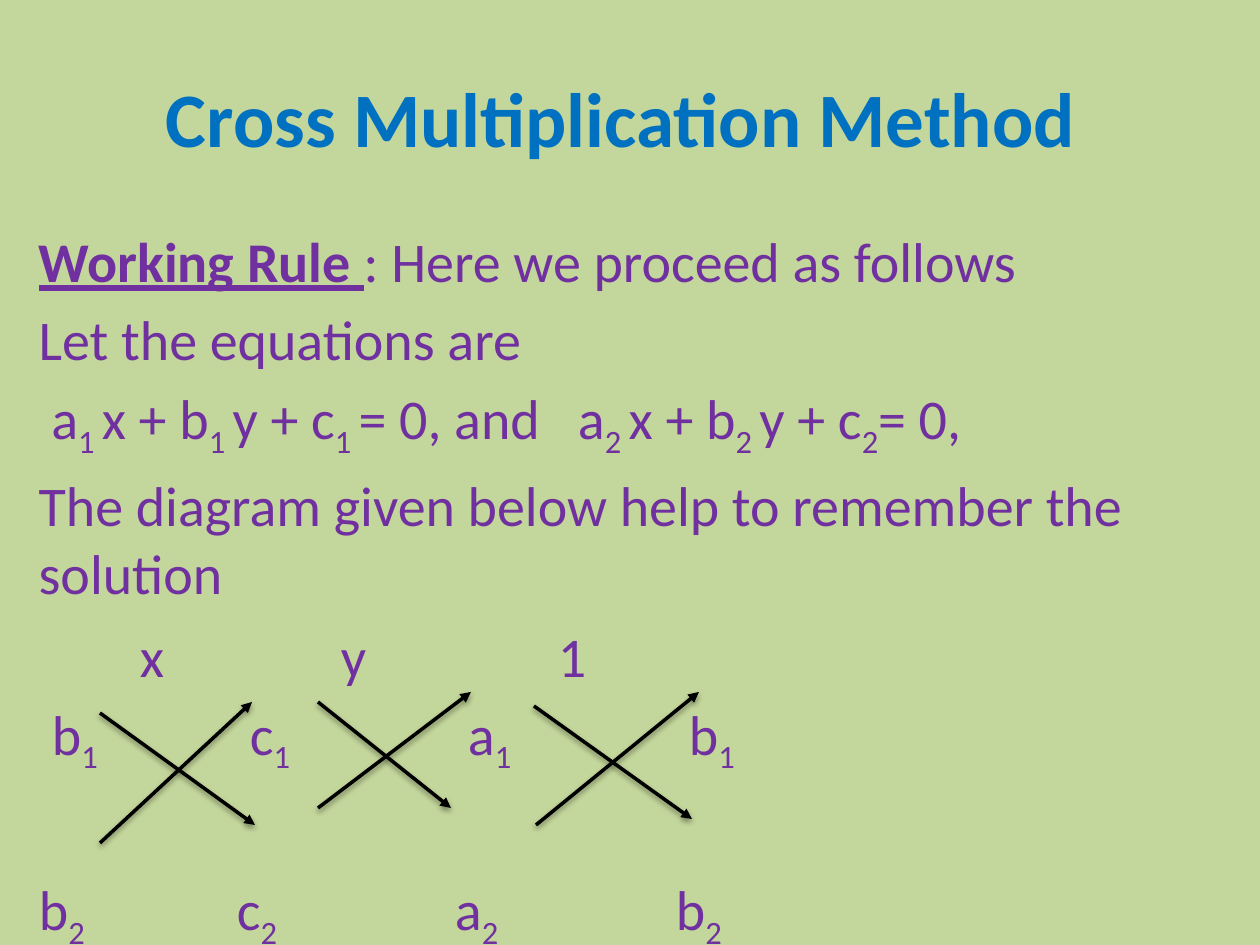
from pptx import Presentation
from pptx import util as u
from pptx.dml.color import RGBColor
from pptx.enum import shapes, text
from pptx.oxml import ns, xmlchemy

PX = 914400 / 126
GREEN = RGBColor(0xC3, 0xD6, 0x9B)
BLUE = RGBColor(0x00, 0x70, 0xC0)
PURPLE = RGBColor(0x70, 0x30, 0xA0)
BLACK = RGBColor(0, 0, 0)


def emu(px):
    """Turn pixels into EMU."""
    return u.Emu(round(px * PX))


def place(shape, box):
    """Move a shape into a box."""
    shape.left, shape.top, shape.width, shape.height = map(emu, box)


def style(font, size, color):
    """Set face, size and colour."""
    font.name = "Calibri"
    font.size = u.Pt(size)
    font.color.rgb = color


def write(para, line):
    """Add purple runs, with parts between tildes as subscripts."""
    style(para.font, 32, PURPLE)
    for i, part in enumerate(line.split("~")):
        if part:
            run = para.add_run()
            run.text = part
            if i % 2:
                run._r.get_or_add_rPr().set("baseline", "-25000")


def plain(para):
    """Drop the bullet and its indent."""
    props = para._p.get_or_add_pPr()
    props.set("marL", "0")
    props.set("indent", "0")
    props.find(ns.qn("a:defRPr")).addprevious(xmlchemy.OxmlElement("a:buNone"))


def add_title(slide, box):
    """Fill the title placeholder."""
    title = slide.shapes.title
    place(title, box)
    title.text = "Cross Multiplication Method "
    font = title.text_frame.paragraphs[0].font
    style(font, 44, BLUE)
    font.bold = True


def add_body(slide, box):
    """Fill the body placeholder with the working rule."""
    body = slide.placeholders[1]
    place(body, box)
    frame = body.text_frame
    frame.auto_size = text.MSO_AUTO_SIZE.NONE
    lines = (
        "Working Rule ~~: Here we proceed as follows",
        "Let the equations are",
        " a~1 ~x + b~1 ~y + c~1 ~= 0, and   a~2 ~x + b~2 ~y + c~2~= 0,",
        "The diagram given below help to remember the solution",
    )
    for i, line in enumerate(lines):
        para = frame.add_paragraph() if i else frame.paragraphs[0]
        write(para, line)
        plain(para)
    lead = frame.paragraphs[0].runs[0].font
    lead.bold = lead.underline = True


def add_label(slide, box, line):
    """Add one letter of the diagram."""
    frame = slide.shapes.add_textbox(*map(emu, box)).text_frame
    frame.margin_left = frame.margin_right = 0
    frame.margin_top = frame.margin_bottom = 0
    frame.word_wrap = False
    write(frame.paragraphs[0], line)


def add_cross(slide, box, fall, rise):
    """Draw a falling and a rising arrow, given from the box's corner."""
    left, top = box
    for x1, y1, x2, y2 in (fall, rise):
        ends = (left + x1, top + y1, left + x2, top + y2)
        arrow = slide.shapes.add_connector(
            shapes.MSO_CONNECTOR.STRAIGHT, *map(emu, ends))
        arrow.line.color.rgb = BLACK
        arrow.line.width = u.Pt(2)
        tail = xmlchemy.OxmlElement("a:tailEnd")
        tail.set("type", "triangle")
        arrow.line._get_or_add_ln().append(tail)


def add_diagram(slide, box):
    """Place the rows of letters and the crosses between them."""
    left, top = box
    cols = (0, 198, 416, 637)
    names = "bcab"
    rows = [
        (0, zip((101, 302, 519), "xy1")),
        (78, [(x + 13, f"{name}~1~") for x, name in zip(cols, names)]),
        (253, [(x, f"{name}~2~") for x, name in zip(cols, names)]),
    ]
    for y, row in rows:
        for x, line in row:
            add_label(slide, (left + x, top + y, 50, 68), line)
    crosses = (
        ((61, 81), (0, 11, 155, 123), (0, 141, 152, 0)),
        ((279, 71), (0, 10, 133, 116), (0, 116, 153, 0)),
        ((495, 71), (0, 14, 158, 127), (2, 133, 165, 0)),
    )
    for (x, y), fall, rise in crosses:
        add_cross(slide, (left + x, top + y), fall, rise)


def main():
    """Build and save the slide."""
    deck = Presentation()
    deck.slide_width, deck.slide_height = emu(1260), emu(945)
    slide = deck.slides.add_slide(deck.slide_layouts[1])
    fill = slide.background.fill
    fill.solid()
    fill.fore_color.rgb = GREEN
    add_title(slide, (63, 38, 1134, 158))
    add_body(slide, (26, 220, 1134, 725))
    add_diagram(slide, (39, 621))
    deck.save("out.pptx")


if __name__ == "__main__":
    main()
